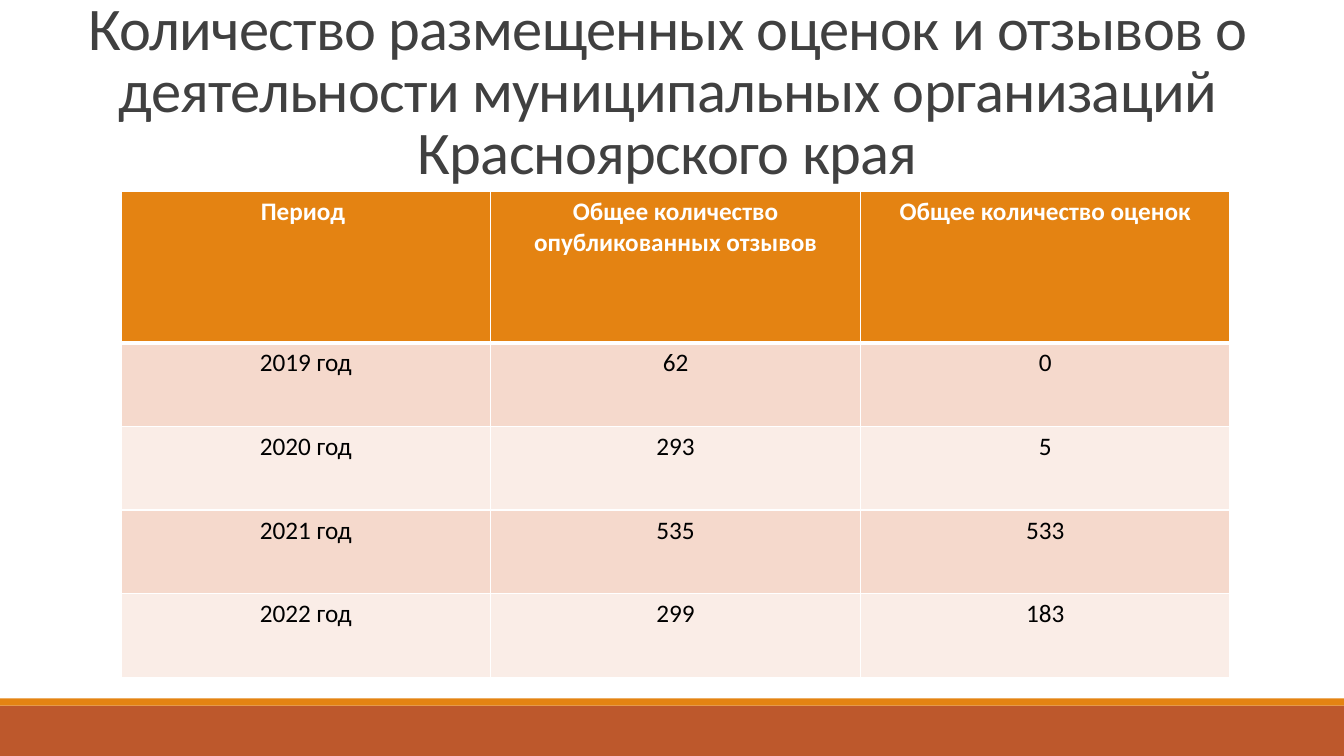
from dataclasses import dataclass

import pptx
import pptx.dml.color
import pptx.enum.shapes
import pptx.enum.text
import pptx.oxml
import pptx.oxml.ns
import pptx.util

Inches = pptx.util.Inches
RGBColor = pptx.dml.color.RGBColor

WHITE = RGBColor(0xFF, 0xFF, 0xFF)
BLACK = RGBColor(0x00, 0x00, 0x00)
GREY = RGBColor(0x40, 0x40, 0x40)
ORANGE = RGBColor(0xE4, 0x83, 0x12)
RUST = RGBColor(0xBD, 0x58, 0x2C)
BAND_DARK = RGBColor(0xF5, 0xD9, 0xCC)
BAND_LIGHT = RGBColor(0xFA, 0xED, 0xE7)

TITLE = ("Количество размещенных оценок и отзывов о деятельности "
         "муниципальных организаций Красноярского края")
HEADER = ("Период ", "Общее количество опубликованных отзывов",
          "Общее количество оценок")


@dataclass(frozen=True)
class Bar:
    top: float
    height: float
    color: RGBColor


@dataclass(frozen=True)
class Period:
    year: int
    reviews: int
    ratings: int

    def texts(self) -> tuple[str, str, str]:
        return f"{self.year} год", str(self.reviews), str(self.ratings)


BARS = [Bar(7, 0.5, RUST), Bar(6.93, 0.07, ORANGE)]
PERIODS = [Period(2019, 62, 0), Period(2020, 293, 5),
           Period(2021, 535, 533), Period(2022, 299, 183)]


def write(tf, text: str, *, size: float = 18, color: RGBColor = BLACK,
          bold: bool = False, line_spacing: float = 1, spacing: int = 0) -> None:
    tf.word_wrap = True
    p = tf.paragraphs[0]
    p.alignment = pptx.enum.text.PP_ALIGN.CENTER
    p.line_spacing = line_spacing
    r = p.add_run()
    r.text = text
    r.font.name = "Calibri"
    r.font.size = pptx.util.Pt(size)
    r.font.bold = bold
    r.font.color.rgb = color
    if spacing:
        r.font._element.set("spc", str(spacing))


def draw_bar(s, bar: Bar, width: int) -> None:
    sp = s.shapes.add_shape(pptx.enum.shapes.MSO_SHAPE.RECTANGLE, 0,
                            Inches(bar.top), width, Inches(bar.height))
    sp.shadow.inherit = False
    sp.fill.solid()
    sp.fill.fore_color.rgb = bar.color
    sp.line.fill.background()


def draw_title(s) -> None:
    sp = s.shapes.add_textbox(Inches(0.69), Inches(0.1), Inches(11.86), Inches(1.8))
    tf = sp.text_frame
    tf.vertical_anchor = pptx.enum.text.MSO_ANCHOR.BOTTOM
    write(tf, TITLE, size=43.2, color=GREY, line_spacing=0.85, spacing=-50)


def set_borders(cell, top: float, bottom: float) -> None:
    tcPr = cell._tc.get_or_add_tcPr()
    widths = {"lnL": 1, "lnR": 1, "lnT": top, "lnB": bottom}
    for i, (side, width) in enumerate(widths.items()):
        ln = pptx.oxml.parse_xml(
            f'<a:{side} {pptx.oxml.ns.nsdecls("a")} w="{pptx.util.Pt(width)}">'
            f'<a:solidFill><a:srgbClr val="{WHITE}"/></a:solidFill></a:{side}>')
        tcPr.insert(i, ln)


def draw_table(s) -> None:
    rows = [HEADER] + [period.texts() for period in PERIODS]
    table = s.shapes.add_table(len(rows), len(HEADER), Inches(1.2), Inches(1.9),
                               Inches(11), Inches(4.81)).table
    for i, texts in enumerate(rows):
        is_header = i == 0
        table.rows[i].height = Inches(1.5 if is_header else 0.83)
        band = BAND_DARK if i % 2 else BAND_LIGHT
        for j, text in enumerate(texts):
            cell = table.cell(i, j)
            cell.fill.solid()
            cell.fill.fore_color.rgb = ORANGE if is_header else band
            set_borders(cell, top=3 if i == 1 else 1, bottom=3 if is_header else 1)
            write(cell.text_frame, text, bold=is_header,
                  color=WHITE if is_header else BLACK)


def main() -> None:
    prs = pptx.Presentation()
    prs.slide_width = Inches(13.33)
    prs.slide_height = Inches(7.5)
    s = prs.slides.add_slide(prs.slide_layouts[6])
    for bar in BARS:
        draw_bar(s, bar, prs.slide_width)
    draw_title(s)
    draw_table(s)
    prs.save("out.pptx")


if __name__ == "__main__":
    main()
